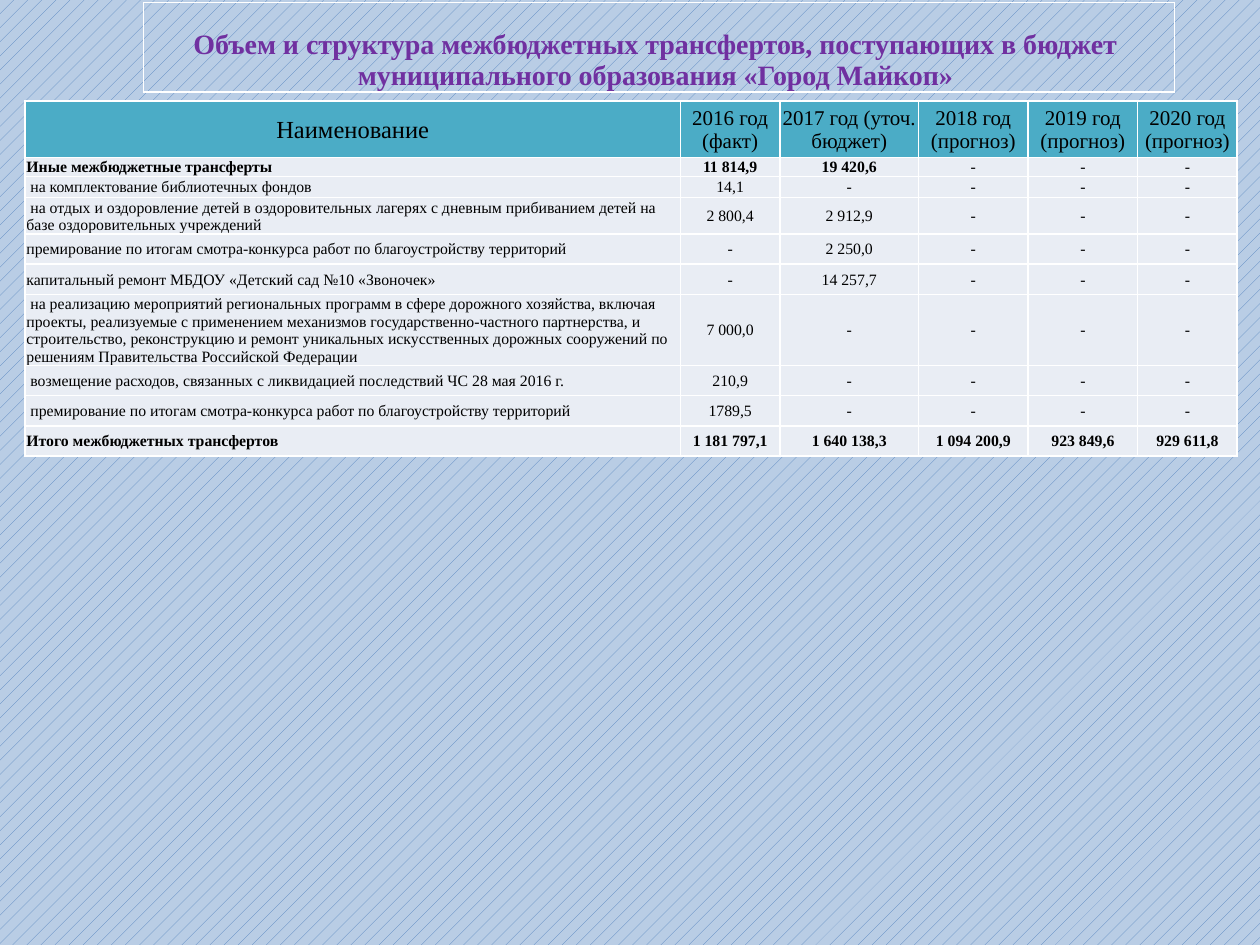
"""Build the slide on intergovernmental transfers to the municipal budget."""
from lxml import etree
from pptx import Presentation
from pptx.dml.color import RGBColor
from pptx.enum import dml, text
from pptx.oxml import ns
from pptx.util import Inches, Pt

WHITE = RGBColor(0xFF, 0xFF, 0xFF)
BLACK = RGBColor(0, 0, 0)
PURPLE = RGBColor(0x70, 0x30, 0xA0)
TEAL = RGBColor(0x4B, 0xAC, 0xC6)
PALE = RGBColor(0xE9, 0xED, 0xF4)
BLUE = RGBColor(0x4F, 0x81, 0xBD)
LIGHT_BLUE = RGBColor(0xB9, 0xCD, 0xE5)


def place_table(slide, left, top, widths, heights):
    table = slide.shapes.add_table(
        len(heights), len(widths), Inches(left), Inches(top),
        Inches(sum(widths)), Inches(sum(heights))).table
    table.first_row = table.horz_banding = False
    for column, width in zip(table.columns, widths):
        column.width = Inches(width)
    for row, height in zip(table.rows, heights):
        row.height = Inches(height)
    return table


def fill_cell(cell, words, size, color, bold, align, anchor, fill=None):
    cell.margin_left = cell.margin_right = cell.margin_top = Inches(0.01)
    cell.margin_bottom = 0
    cell.vertical_anchor = anchor
    properties = cell._tc.get_or_add_tcPr()
    for side in ("lnL", "lnR", "lnT", "lnB"):
        border = etree.SubElement(properties, ns.qn(f"a:{side}"), w=str(Pt(1)))
        solid = etree.SubElement(border, ns.qn("a:solidFill"))
        etree.SubElement(solid, ns.qn("a:srgbClr"), val=str(WHITE))
    if fill is None:
        cell.fill.background()
    else:
        cell.fill.solid()
        cell.fill.fore_color.rgb = fill
    cell.text_frame.text = words
    for paragraph in cell.text_frame.paragraphs:
        paragraph.alignment = align
        for run in paragraph.runs:
            run.font.name = "Times New Roman"
            run.font.size = Pt(size)
            run.font.bold = bold
            run.font.color.rgb = color


deck = Presentation()
deck.slide_width, deck.slide_height = Inches(10), Inches(7.5)
slide = deck.slides.add_slide(deck.slide_layouts[6])
backdrop = slide.background.fill
backdrop.patterned()
backdrop.pattern = dml.MSO_PATTERN.PERCENT_10
backdrop.fore_color.rgb = BLUE
backdrop.back_color.rgb = LIGHT_BLUE

LEFT, CENTER = text.PP_ALIGN.LEFT, text.PP_ALIGN.CENTER
MIDDLE, BOTTOM = text.MSO_ANCHOR.MIDDLE, text.MSO_ANCHOR.BOTTOM

title = place_table(slide, 1.14, 0.02, [8.18], [0.71])
fill_cell(title.cell(0, 0),
          "Объем и структура межбюджетных трансфертов, поступающих в бюджет \n"
          "муниципального образования «Город Майкоп» ",
          16, PURPLE, True, CENTER, BOTTOM)

headings = ["Наименование", "2016 год (факт)", "2017 год (уточ. бюджет)",
            "2018 год (прогноз)", "2019 год (прогноз)", "2020 год (прогноз)"]
transfers = [
    ("Иные межбюджетные трансферты", "11 814,9", "19 420,6"),
    (" на комплектование библиотечных фондов", "14,1"),
    (" на отдых и оздоровление детей в оздоровительных лагерях с дневным "
     "прибиванием детей на базе оздоровительных учреждений", "2 800,4", "2 912,9"),
    ("премирование по итогам смотра-конкурса работ по благоустройству территорий",
     "-", "2 250,0"),
    ("капитальный ремонт МБДОУ «Детский сад №10 «Звоночек»", "-", "14 257,7"),
    (" на реализацию мероприятий региональных программ в сфере дорожного хозяйства, "
     "включая проекты, реализуемые с применением механизмов "
     "государственно-частного партнерства, и строительство, реконструкцию и ремонт "
     "уникальных искусственных дорожных сооружений по решениям Правительства "
     "Российской Федерации", "7 000,0"),
    (" возмещение расходов, связанных с ликвидацией последствий ЧС 28 мая 2016 г.",
     "210,9"),
    (" премирование по итогам смотра-конкурса работ по благоустройству территорий",
     "1789,5"),
    ("Итого межбюджетных трансфертов", "1 181 797,1", "1 640 138,3",
     "1 094 200,9", "923 849,6", "929 611,8"),
]
bold_rows = (0, len(transfers) - 1)

budget = place_table(slide, 0.2, 0.8, [5.2, 0.79, 1.1, 0.87, 0.87, 0.79],
                     [0.45, 0.14, 0.17] + [0.24] * 7)
for c, heading in enumerate(headings):
    fill_cell(budget.cell(0, c), heading, 12 if c else 14, BLACK, False,
              CENTER, MIDDLE, TEAL)
for r, entries in enumerate(transfers):
    for c in range(len(headings)):
        words = entries[c] if c < len(entries) else "-"
        fill_cell(budget.cell(r + 1, c), words, 9, BLACK,
                  r in bold_rows and words != "-",
                  CENTER if c else LEFT, MIDDLE, PALE)

deck.save("out.pptx")
